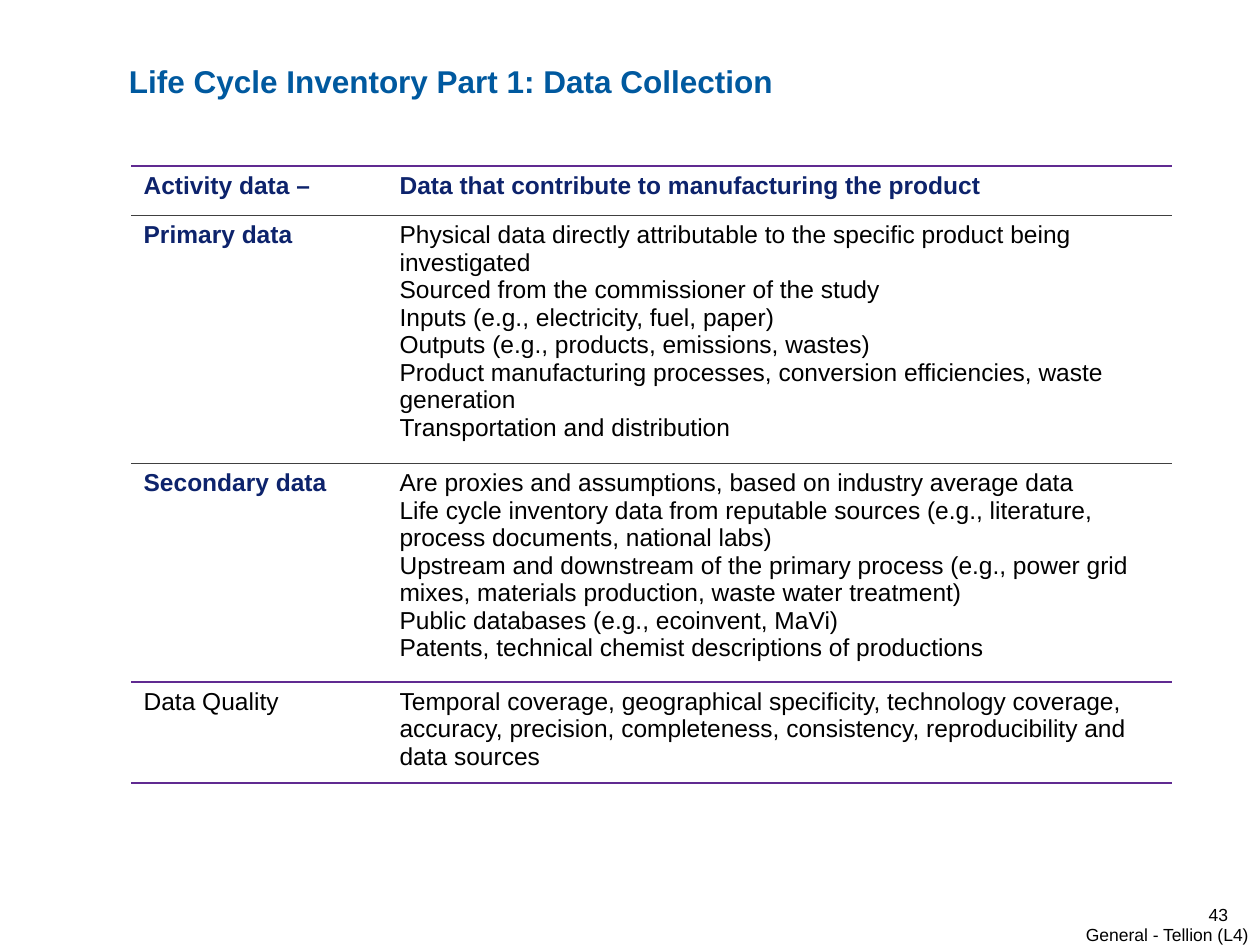
from typing import NamedTuple

from lxml.etree import SubElement
from pptx import Presentation
from pptx.dml.color import RGBColor
from pptx.enum.text import MSO_ANCHOR, PP_ALIGN
from pptx.oxml.ns import qn
from pptx.util import Emu, Pt

PX_PER_INCH = 126
BLACK, GRAY, NAVY, BLUE, PURPLE, WHITE = (
    "000000", "404040", "0D236C", "00599F", "602A91", "FFFFFF")


class Rule(NamedTuple):
    color: str
    points: float


class Style(NamedTuple):
    color: str
    bold: bool


class Topic(NamedTuple):
    term: str
    details: list[str]
    term_style: Style
    detail_style: Style
    height: int


STRONG, PLAIN = Style(NAVY, True), Style(BLACK, False)
THICK, THIN = Rule(PURPLE, 1), Rule(GRAY, 0.5)
RULES = [THICK, THIN, THIN, THICK, THICK]
COLUMN_WIDTHS = [256, 785]
TOPICS = [
    Topic("Activity data –", ["Data that contribute to manufacturing the product"],
          STRONG, STRONG, 49),
    Topic("Primary data", [
        "Physical data directly attributable to the specific product being investigated",
        "Sourced from the commissioner of the study",
        "Inputs (e.g., electricity, fuel, paper)",
        "Outputs (e.g., products, emissions, wastes)",
        "Product manufacturing processes, conversion efficiencies, waste generation",
        "Transportation and distribution",
    ], STRONG, PLAIN, 248),
    Topic("Secondary data", [
        "Are proxies and assumptions, based on industry average data",
        "Life cycle inventory data from reputable sources (e.g., literature, "
        "process documents, national labs)",
        "Upstream and downstream of the primary process (e.g., power grid mixes, "
        "materials production, waste water treatment)",
        "Public databases (e.g., ecoinvent, MaVi)",
        "Patents, technical chemist descriptions of productions",
    ], STRONG, PLAIN, 219),
    Topic("Data Quality", [
        "Temporal coverage, geographical specificity, technology coverage, accuracy, "
        "precision, completeness, consistency, reproducibility and data sources",
    ], PLAIN, PLAIN, 101),
]


def px(length: int) -> Emu:
    return Emu(round(length * 914400 / PX_PER_INCH))


def rgb(color: str) -> RGBColor:
    return RGBColor.from_string(color)


def write(frame, lines: list[str], *, size: int, color: str = BLACK,
          bold: bool = False, align=PP_ALIGN.LEFT) -> None:
    for index, line in enumerate(lines):
        paragraph = frame.paragraphs[0] if index == 0 else frame.add_paragraph()
        paragraph.alignment = align
        run = paragraph.add_run()
        run.text = line
        run.font.name = "Arial"
        run.font.size = Pt(size)
        run.font.bold = bold
        run.font.color.rgb = rgb(color)


def add_label(slide, text: str, box: tuple[int, int, int, int], *,
              insets: tuple[int, int] = (13, 6), anchor=MSO_ANCHOR.TOP,
              **text_format) -> None:
    frame = slide.shapes.add_textbox(*map(px, box)).text_frame
    frame.word_wrap = True
    frame.vertical_anchor = anchor
    frame.margin_left = frame.margin_right = px(insets[0])
    frame.margin_top = frame.margin_bottom = px(insets[1])
    write(frame, [text], **text_format)


def set_borders(cell, top: Rule, bottom: Rule) -> None:
    properties = cell._tc.get_or_add_tcPr()
    for side, rule in (("L", None), ("R", None), ("T", top), ("B", bottom)):
        line = SubElement(properties, qn(f"a:ln{side}"))
        if rule is None:
            SubElement(line, qn("a:noFill"))
        else:
            line.set("w", str(Pt(rule.points)))
            fill = SubElement(line, qn("a:solidFill"))
            SubElement(fill, qn("a:srgbClr")).set("val", rule.color)


def add_topics(slide, left: int, top: int) -> None:
    width, height = sum(COLUMN_WIDTHS), sum(topic.height for topic in TOPICS)
    table = slide.shapes.add_table(
        len(TOPICS), len(COLUMN_WIDTHS), px(left), px(top), px(width), px(height)).table
    table.first_row = table.horz_banding = False
    for column, column_width in zip(table.columns, COLUMN_WIDTHS):
        column.width = px(column_width)
    for index, topic in enumerate(TOPICS):
        table.rows[index].height = px(topic.height)
        entries = [([topic.term], topic.term_style), (topic.details, topic.detail_style)]
        for cell, (lines, style) in zip(table.rows[index].cells, entries):
            set_borders(cell, RULES[index], RULES[index + 1])
            cell.fill.solid()
            cell.fill.fore_color.rgb = rgb(WHITE)
            write(cell.text_frame, lines, size=14, color=style.color, bold=style.bold)


def main() -> None:
    """Build the life cycle inventory slide."""
    deck = Presentation()
    deck.slide_width, deck.slide_height = px(1260), px(945)
    slide = deck.slides.add_slide(deck.slide_layouts[6])
    add_label(slide, "General - Tellion (L4)", (1086, 924, 174, 21),
              insets=(0, 0), size=10)
    add_label(slide, "43", (1165, 902, 63, 25), insets=(0, 6),
              anchor=MSO_ANCHOR.MIDDLE, size=10, align=PP_ALIGN.RIGHT)
    add_label(slide, "Life Cycle Inventory Part 1: Data Collection", (116, 56, 805, 50),
              size=18, color=BLUE, bold=True)
    add_topics(slide, 131, 166)
    deck.save("out.pptx")


if __name__ == "__main__":
    main()
